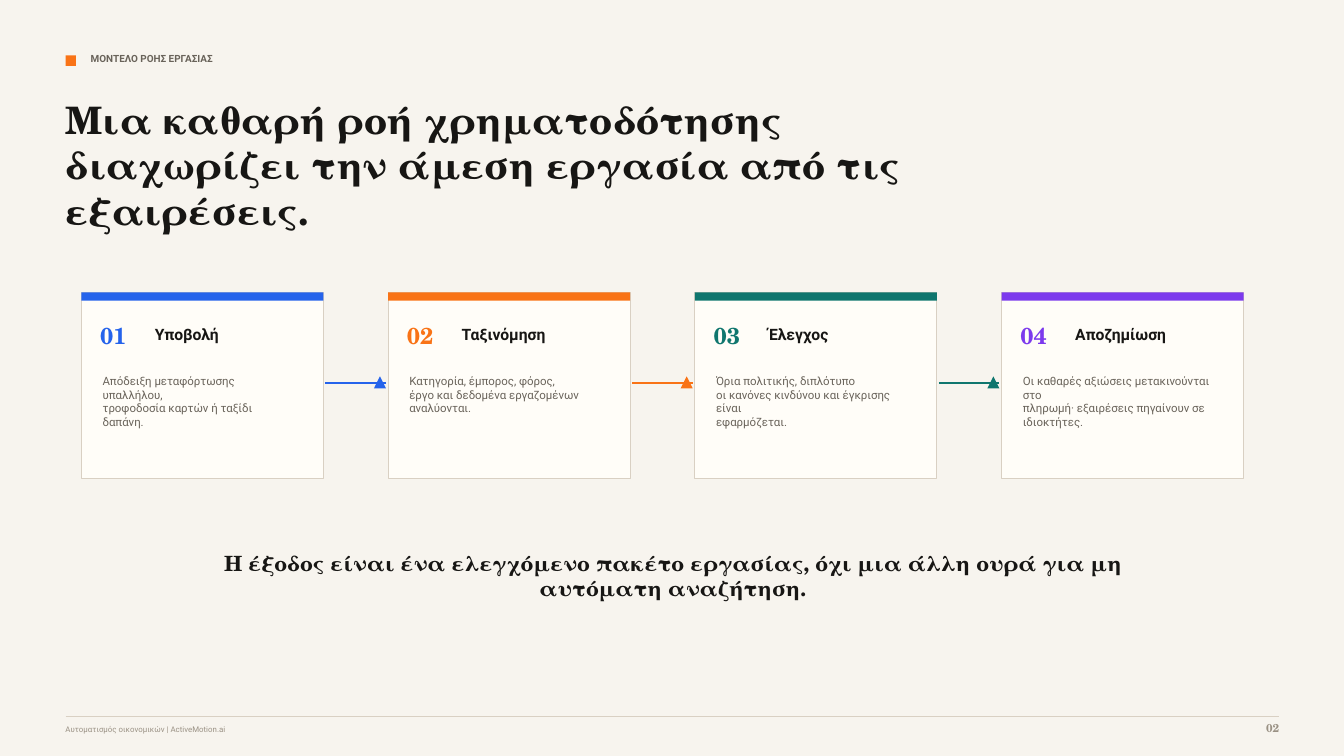
from lxml import etree
from pptx import Presentation
from pptx import util as u
from pptx.dml.color import RGBColor
from pptx.enum import shapes, text
from pptx.oxml.ns import qn

COLORS = {
    "paper": "F7F4EE", "card": "FFFDF8", "rule": "D9D0C3",
    "ink": "171614", "body": "69635A", "muted": "9A9184",
    "blue": "2563EB", "orange": "F97316", "green": "0F766E", "violet": "7C3AED",
}
SERIF, SANS = "TeX Gyre Schola", "Roboto"
LEFT, RIGHT = 46.8, 913.7
CARD_LEFT, CARD_TOP, CARD_W, CARD_H, CARD_PITCH = 58.2, 208.8, 172.8, 133.2, 219.1
ARROW_Y = 273.4

STEPS = [
    ("Υποβολή", "blue",
     ["Απόδειξη μεταφόρτωσης υπαλλήλου,", "τροφοδοσία καρτών ή ταξίδι", "δαπάνη."]),
    ("Ταξινόμηση", "orange",
     ["Κατηγορία, έμπορος, φόρος,", "έργο και δεδομένα εργαζομένων", "αναλύονται."]),
    ("Έλεγχος", "green",
     ["Όρια πολιτικής, διπλότυπο", "οι κανόνες κινδύνου και έγκρισης είναι", "εφαρμόζεται."]),
    ("Αποζημίωση", "violet",
     ["Οι καθαρές αξιώσεις μετακινούνται στο", "πληρωμή· εξαιρέσεις πηγαίνουν σε", "ιδιοκτήτες."]),
]


def rgb(name):
    return RGBColor.from_string(COLORS[name])


class Deck:
    def __init__(self):
        self.prs = Presentation()
        self.prs.slide_width, self.prs.slide_height = u.Pt(960), u.Pt(540)

    def new_slide(self):
        self.s = self.prs.slides.add_slide(self.prs.slide_layouts[5])
        fill = self.s.background.fill
        fill.solid()
        fill.fore_color.rgb = rgb("paper")

    def set_text(self, sp, lines, size, color, font=SANS, bold=False, align="LEFT"):
        tf = sp.text_frame
        tf.word_wrap = True
        tf.auto_size = text.MSO_AUTO_SIZE.NONE
        tf.vertical_anchor = text.MSO_ANCHOR.TOP
        tf.margin_left = tf.margin_top = tf.margin_right = tf.margin_bottom = 0
        tf.text = "\n".join(lines)
        for p in tf.paragraphs:
            p.alignment = text.PP_ALIGN[align]
            p.font.name, p.font.size, p.font.bold = font, u.Pt(size), bold
            p.font.color.rgb = rgb(color)

    def title(self, x, y, w, h, line, size):
        sp = self.s.shapes.title
        sp.left, sp.top, sp.width, sp.height = map(u.Pt, (x, y, w, h))
        self.set_text(sp, [line], size, "ink", SERIF, True)

    def label(self, x, y, w, h, lines, size, color, **style):
        sp = self.s.shapes.add_textbox(*map(u.Pt, (x, y, w, h)))
        self.set_text(sp, lines, size, color, **style)

    def shape(self, x, y, w, h, fill, outline=None, kind="RECTANGLE"):
        sp = self.s.shapes.add_shape(shapes.MSO_SHAPE[kind], *map(u.Pt, (x, y, w, h)))
        sp.shadow.inherit = False
        sp.fill.solid()
        sp.fill.fore_color.rgb = rgb(fill)
        if outline:
            sp.line.color.rgb = rgb(outline)
            sp.line.width = u.Pt(0.75)
        else:
            sp.line.fill.background()

    def hline(self, x1, x2, y, color, width):
        line = self.s.shapes.add_connector(
            shapes.MSO_CONNECTOR.STRAIGHT, *map(u.Pt, (x1, y, x2, y)))
        line.line.color.rgb = rgb(color)
        line.line.width = u.Pt(width)
        etree.SubElement(line._element.spPr, qn("a:effectLst"))

    def card(self, x, number, name, color, lines):
        self.shape(x, CARD_TOP, CARD_W, CARD_H, "card", "rule")
        self.shape(x, CARD_TOP, CARD_W, 6, color)
        self.label(x + 13.4, 229.7, 33, 21, [f"{number:02}"], 16.5, color, font=SERIF, bold=True)
        self.label(x + 52.4, 231.8, 96, 15, [name], 11.2, "ink", bold=True)
        self.label(x + 15.1, 267.1, 138, 51, lines, 8.2, "body")

    def arrow(self, x, color):
        self.hline(x, x + 43.2, ARROW_Y, color, 1.7)
        self.shape(x + 34.6, ARROW_Y - 4.6, 8.6, 8.6, color, kind="ISOSCELES_TRIANGLE")


def main():
    deck = Deck()
    deck.new_slide()
    deck.shape(LEFT, 39.6, 7.5, 7.5, "orange")
    deck.label(64.8, 37.4, 420, 14, ["ΜΟΝΤΕΛΟ ΡΟΗΣ ΕΡΓΑΣΙΑΣ"], 7.1, "body", bold=True)
    deck.title(LEFT, 69.1, 675.4, 77.8,
               "Μια καθαρή ροή χρηματοδότησης διαχωρίζει την άμεση εργασία από τις εξαιρέσεις.", 27)

    for i, (name, color, lines) in enumerate(STEPS):
        x = CARD_LEFT + i * CARD_PITCH
        deck.card(x, i + 1, name, color, lines)
        if i < len(STEPS) - 1:
            deck.arrow(x + CARD_W + 1.5, color)

    deck.label(131.8, 393.1, 697.7, 31.7,
               ["Η έξοδος είναι ένα ελεγχόμενο πακέτο εργασίας, όχι μια άλλη ουρά για μη "
                "αυτόματη αναζήτηση."],
               15, "ink", font=SERIF, bold=True, align="CENTER")
    deck.hline(LEFT, RIGHT, 511.6, "rule", 0.75)
    deck.label(LEFT, 517.7, 570, 11, ["Αυτοματισμός οικονομικών | ActiveMotion.ai"], 5.6, "muted")
    deck.label(RIGHT - 36, 514.8, 36, 14, ["02"], 8.2, "muted",
               font=SERIF, bold=True, align="RIGHT")
    deck.prs.save("out.pptx")


if __name__ == "__main__":
    main()
